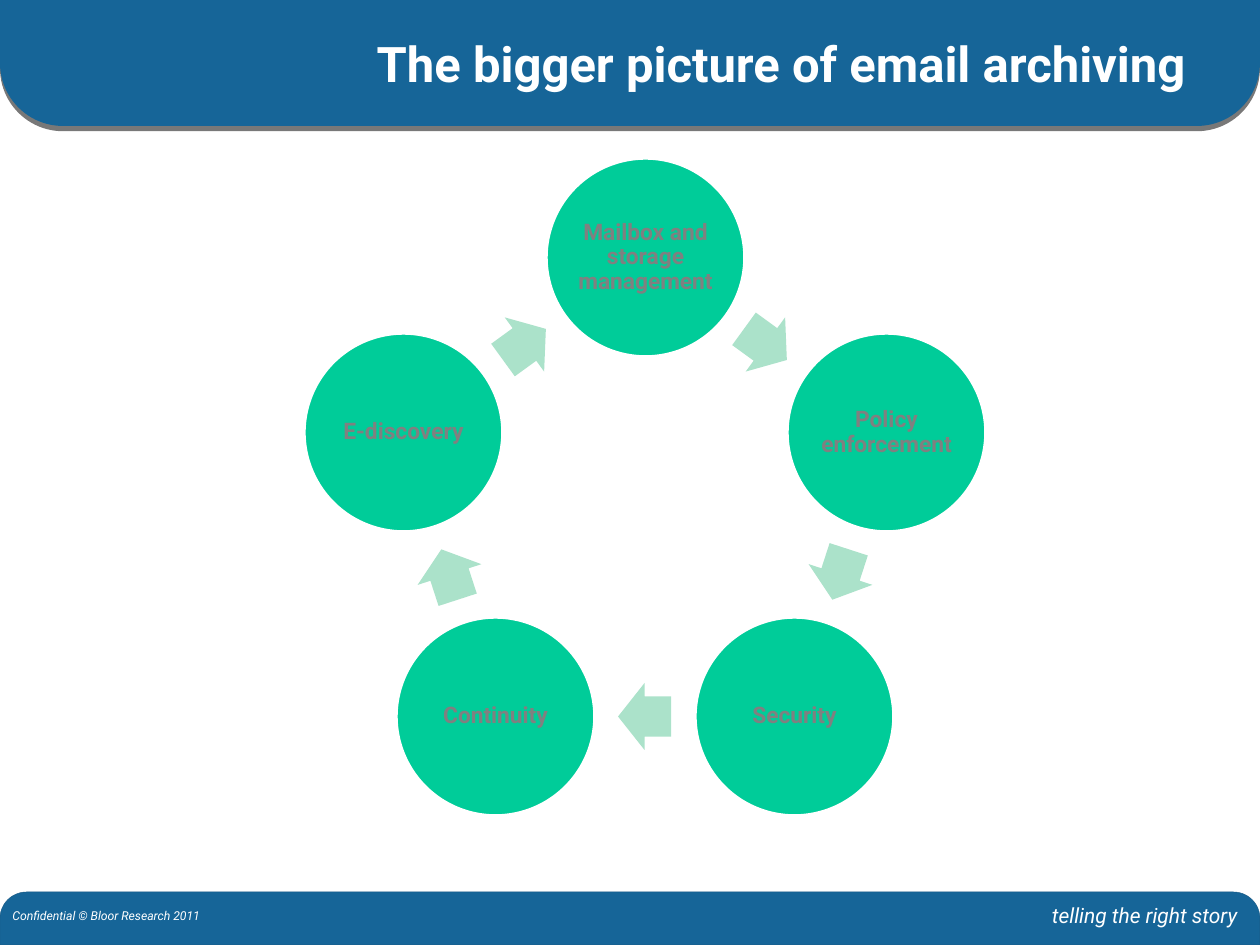
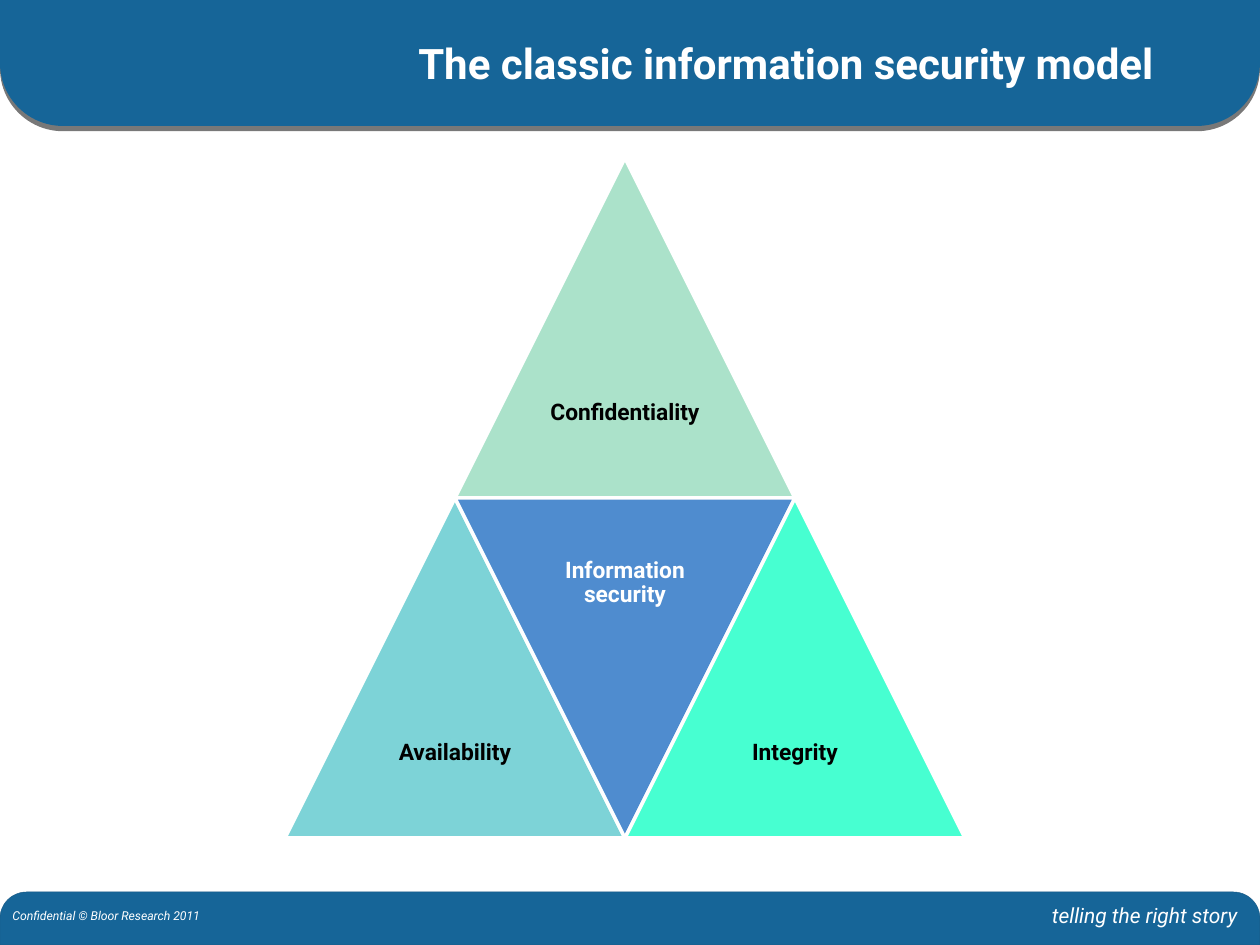
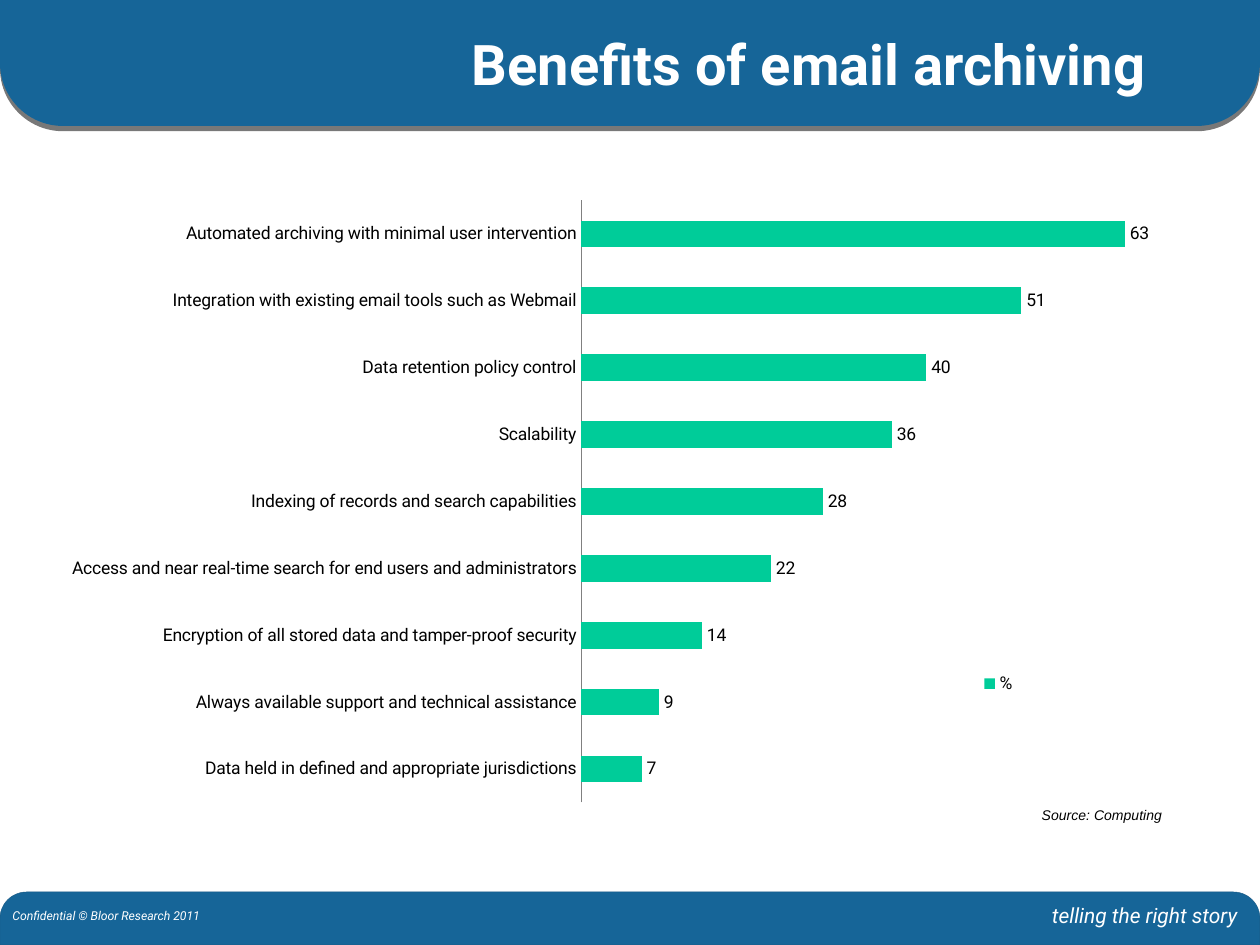
import math
from dataclasses import dataclass

from lxml import etree
from pptx import Presentation
from pptx import util as u
from pptx.chart import data as chart_data
from pptx.dml.color import RGBColor
from pptx.enum import chart as chart_enum
from pptx.enum import shapes, text
from pptx.oxml import ns

EMU_PER_PX = 914400 / 126
WIDTH, HEIGHT = 1260, 945
FONT = "Roboto"

WHITE = RGBColor(0xFF, 0xFF, 0xFF)
BLACK = RGBColor(0x00, 0x00, 0x00)
GREY = RGBColor(0x80, 0x80, 0x80)
BLUE = RGBColor(0x16, 0x65, 0x98)
BLUE_EDGE = RGBColor(0x1A, 0x5A, 0x85)
GREEN = RGBColor(0x00, 0xCC, 0x99)
MINT = RGBColor(0xAB, 0xE2, 0xCA)
TEAL = RGBColor(0x7D, 0xD3, 0xD7)
INDIGO = RGBColor(0x4F, 0x8C, 0xCF)
AQUA = RGBColor(0x47, 0xFF, 0xD1)

SHAPE = shapes.MSO_SHAPE
ALIGN = text.PP_ALIGN


@dataclass(frozen=True)
class Area:
    left: int
    top: int
    width: int
    height: int

    def emu(self) -> list[u.Emu]:
        return [px(n) for n in (self.left, self.top, self.width, self.height)]


@dataclass(frozen=True)
class Style:
    size: float
    color: RGBColor
    bold: bool = False
    italic: bool = False
    align: ALIGN = ALIGN.CENTER
    font: str = FONT
    line_spacing: float = 1.0


@dataclass(frozen=True)
class Pillar:
    """One triangle of the security model, placed in half-widths and rows."""
    label: str
    column: int
    row: int
    fill: RGBColor
    kind: SHAPE = SHAPE.ISOSCELES_TRIANGLE
    color: RGBColor = BLACK


CYCLE_STEPS = ["Mailbox and storage management", "Policy enforcement",
               "Security", "Continuity", "E-discovery"]
PILLARS = [
    Pillar("Confidentiality", 1, 0, MINT),
    Pillar("Availability", 0, 1, TEAL),
    Pillar("Information security", 1, 1, INDIGO, SHAPE.FLOWCHART_MERGE, WHITE),
    Pillar("Integrity", 2, 1, AQUA),
]
BENEFITS = {
    "Data held in defined and appropriate jurisdictions": 7,
    "Always available support and technical assistance": 9,
    "Encryption of all stored data and tamper-proof security": 14,
    "Access and near real-time search for end users and administrators": 22,
    "Indexing of records and search capabilities": 28,
    "Scalability": 36,
    "Data retention policy control": 40,
    "Integration with existing email tools such as Webmail": 51,
    "Automated archiving with minimal user intervention": 63,
}


def px(length: float) -> u.Emu:
    return u.Emu(round(length * EMU_PER_PX))


def centred(x: float, y: float, width: int, height: int) -> Area:
    return Area(round(x - width / 2), round(y - height / 2), width, height)


def write(box, words: str, style: Style, inset: int | None = None, wrap: bool = True) -> None:
    frame = box.text_frame
    frame.text = words
    frame.auto_size = text.MSO_AUTO_SIZE.NONE
    frame.word_wrap = wrap
    frame.vertical_anchor = text.MSO_ANCHOR.MIDDLE
    if inset is not None:
        frame.margin_left = frame.margin_right = px(inset)
        frame.margin_top = frame.margin_bottom = px(inset)
    para = frame.paragraphs[0]
    para.alignment = style.align
    para.line_spacing = style.line_spacing
    for span in para.runs:
        font = span.font
        font.name, font.size = style.font, u.Pt(style.size)
        font.bold, font.italic = style.bold, style.italic
        font.color.rgb = style.color


def add_shape(page, kind: SHAPE, area: Area, fill: RGBColor,
              line: RGBColor | None = None, line_width: float = 2):
    box = page.shapes.add_shape(kind, *area.emu())
    box.shadow.inherit = False
    box.fill.solid()
    box.fill.fore_color.rgb = fill
    if line is None:
        box.line.fill.background()
    else:
        box.line.color.rgb = line
        box.line.width = u.Pt(line_width)
    return box


def add_text(page, area: Area, words: str, style: Style, wrap: bool = True):
    box = page.shapes.add_textbox(*area.emu())
    write(box, words, style, wrap=wrap)
    return box


def add_drop_shadow(box) -> None:
    effects = box.element.spPr.find(ns.qn("a:effectLst"))
    shadow = etree.SubElement(effects, ns.qn("a:outerShdw"), blurRad="0",
                              dist=str(u.Pt(3)), dir="5400000", algn="t", rotWithShape="0")
    color = etree.SubElement(shadow, ns.qn("a:srgbClr"), val=str(BLACK))
    etree.SubElement(color, ns.qn("a:alpha"), val="53000")


def add_master_frame(deck, page) -> None:
    """Draw the bands and footer texts on the page, then move them to the master."""
    header = add_shape(page, SHAPE.ROUND_2_SAME_RECTANGLE, Area(0, 0, WIDTH, 126), BLUE)
    header.adjustments[0], header.adjustments[1] = 0, 0.5
    add_drop_shadow(header)
    footer = add_shape(page, SHAPE.ROUND_2_SAME_RECTANGLE,
                       Area(0, 892, WIDTH, HEIGHT - 892), BLUE, BLUE_EDGE, 0.25)
    footer.adjustments[0], footer.adjustments[1] = 0.5, 0
    slogan = add_text(page, Area(714, 896, 536, 38), "telling the right story",
                      Style(12, WHITE, italic=True, align=ALIGN.RIGHT))
    notice = add_text(page, Area(0, 902, 420, 28), "Confidential © Bloor Research 2011",
                      Style(7, WHITE, italic=True, align=ALIGN.LEFT))
    tree = deck.slide_master.element.cSld.spTree
    for index, box in enumerate((header, footer, slogan, notice), start=2):
        tree.insert(index, box.element)


def add_page(deck, title: str, left: int, size: int):
    page = deck.slides.add_slide(deck.slide_layouts.get_by_name("Title Only"))
    box = page.shapes.title
    box.left, box.top, box.width, box.height = Area(left, 21, 1219 - left, 84).emu()
    write(box, title, Style(size, WHITE, bold=True))
    return page


def add_cycle(page) -> None:
    center_x, center_y, radius = 645, 511, 254
    turn = 360 / len(CYCLE_STEPS)
    arrow_radius = radius * math.cos(math.radians(turn / 2))
    style = Style(13, GREY, bold=True, line_spacing=0.9)

    def on_ring(degrees: float, distance: float, width: int, height: int) -> Area:
        angle = math.radians(degrees)
        return centred(center_x + distance * math.sin(angle),
                       center_y - distance * math.cos(angle), width, height)

    for index, label in enumerate(CYCLE_STEPS):
        angle = index * turn
        circle = add_shape(page, SHAPE.OVAL, on_ring(angle, radius, 199, 199), GREEN, WHITE)
        write(circle, label, style, inset=3)
        heading = angle + turn / 2
        arrow = add_shape(page, SHAPE.RIGHT_ARROW, on_ring(heading, arrow_radius, 53, 67), MINT)
        arrow.adjustments[0], arrow.adjustments[1] = 0.6, 0.5
        arrow.rotation = heading


def add_security_model(page) -> None:
    left, top, side = 285, 158, 340
    for pillar in PILLARS:
        area = Area(left + pillar.column * side // 2, top + pillar.row * side, side, side)
        triangle = add_shape(page, pillar.kind, area, pillar.fill, WHITE)
        write(triangle, pillar.label,
              Style(13, pillar.color, bold=True, line_spacing=0.9), inset=6)


def set_layout(parent, index: int, **places: float) -> None:
    """Give a chart part a fixed place, in fractions of the chart."""
    for old in parent.findall(ns.qn("c:layout")):
        parent.remove(old)
    layout = etree.Element(ns.qn("c:layout"))
    manual = etree.SubElement(layout, ns.qn("c:manualLayout"))
    if "w" in places:
        etree.SubElement(manual, ns.qn("c:layoutTarget"), val="inner")
    for name in ("x", "y"):
        etree.SubElement(manual, ns.qn(f"c:{name}Mode"), val="edge")
    for name, value in places.items():
        etree.SubElement(manual, ns.qn(f"c:{name}"), val=str(value))
    parent.insert(index, layout)


def add_benefits_chart(page) -> None:
    data = chart_data.CategoryChartData()
    data.categories = list(BENEFITS)
    data.add_series("%", list(BENEFITS.values()))
    chart = page.shapes.add_chart(chart_enum.XL_CHART_TYPE.BAR_CLUSTERED,
                                  *Area(49, 147, 1162, 669).emu(), data).chart
    chart.has_title = False
    chart.font.name, chart.font.size = FONT, u.Pt(10)
    chart.font.color.rgb = BLACK

    plot = chart.plots[0]
    plot.gap_width = 150
    plot.vary_by_categories = False
    fill = plot.series[0].format.fill
    fill.solid()
    fill.fore_color.rgb = GREEN
    plot.has_data_labels = True
    plot.data_labels.show_value = True
    plot.data_labels.position = chart_enum.XL_LABEL_POSITION.OUTSIDE_END

    categories, values = chart.category_axis, chart.value_axis
    categories.major_tick_mark = chart_enum.XL_TICK_MARK.NONE
    categories.format.line.color.rgb = GREY
    values.minimum_scale, values.maximum_scale = 0, 70
    values.has_major_gridlines = False
    values.visible = False

    chart.has_legend = True
    chart.legend.position = chart_enum.XL_LEGEND_POSITION.TOP
    chart.legend.include_in_layout = False
    set_layout(chart.element.xpath(".//c:plotArea")[0], 0, x=0.458, y=0.08, w=0.52, h=0.9)
    set_layout(chart.element.xpath(".//c:legend")[0], 1, x=0.8, y=0.78)


def main() -> None:
    deck = Presentation()
    deck.slide_width, deck.slide_height = px(WIDTH), px(HEIGHT)

    page = add_page(deck, "The bigger picture of email archiving", 343, 28)
    add_master_frame(deck, page)
    add_cycle(page)

    page = add_page(deck, "The classic information security model", 353, 24)
    add_security_model(page)

    page = add_page(deck, "Benefits of email archiving", 399, 32)
    add_benefits_chart(page)
    add_text(page, Area(1027, 800, 150, 30), "Source: Computing",
             Style(8, BLACK, italic=True, font="Arial"), wrap=False)

    deck.save("out.pptx")


if __name__ == "__main__":
    main()
